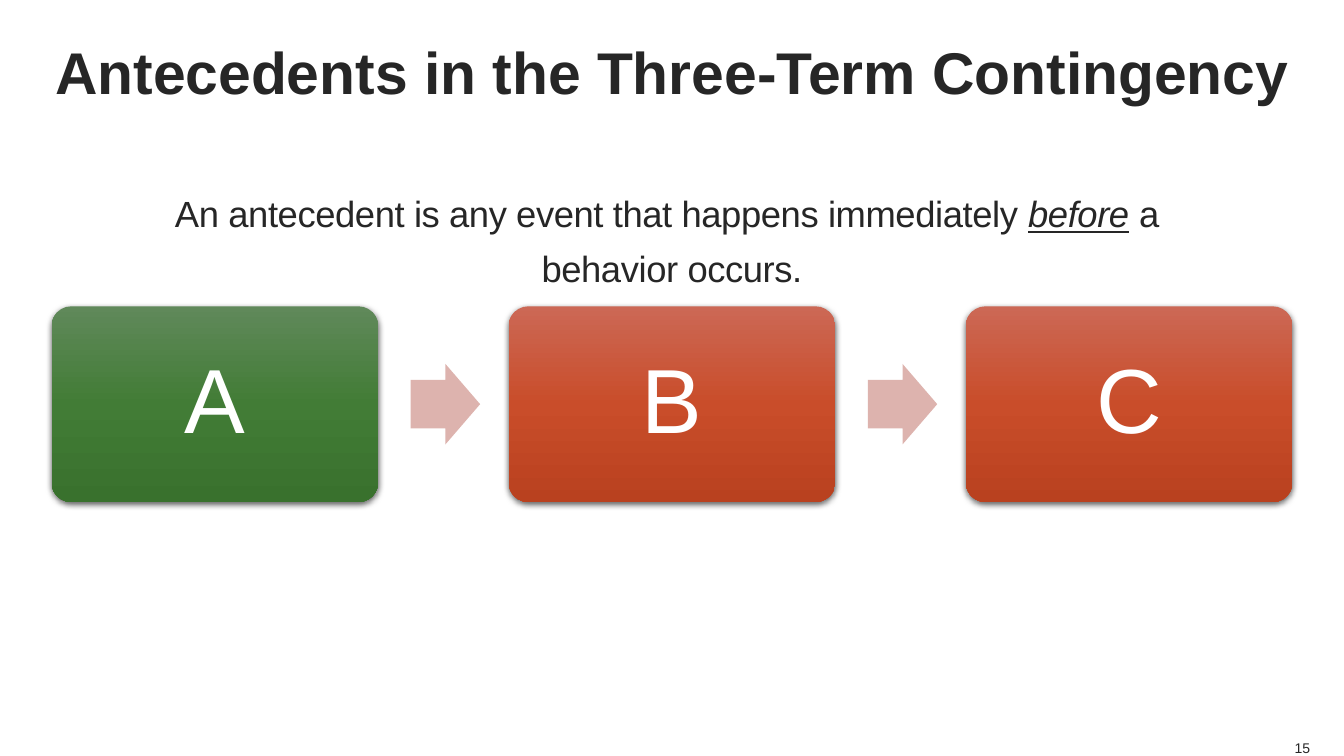
from dataclasses import dataclass

from lxml import etree
from pptx import Presentation
from pptx import util as u
from pptx.dml.color import RGBColor
from pptx.enum import shapes, text
from pptx.oxml import parse_xml
from pptx.oxml.ns import nsdecls, qn


@dataclass(frozen=True)
class Theme:
    font: str = "Arial"
    ink: str = "262626"
    white: str = "FFFFFF"
    arrow: str = "DDB3AE"
    green: tuple = ("60895A", "427C36", "39712D")
    red: tuple = ("CC6855", "C94D2A", "B9411F")
    title: int = 42
    body: int = 26
    letter: int = 65
    number: int = 10


class Deck:
    def __init__(self, theme):
        self.theme = theme
        self.prs = Presentation()
        self.prs.slide_width, self.prs.slide_height = u.Cm(33.87), u.Cm(19.05)

    def add_slide(self):
        self.s = self.prs.slides.add_slide(self.prs.slide_layouts[5])

    def style(self, r, size, color=None, bold=False):
        r.font.name = self.theme.font
        r.font.size = u.Pt(size)
        r.font.bold = bold
        r.font.color.rgb = RGBColor.from_string(color or self.theme.ink)

    def frame(self, sp, anchor, inset=0):
        tf = sp.text_frame
        tf.word_wrap = True
        tf.auto_size = text.MSO_AUTO_SIZE.NONE
        tf.vertical_anchor = anchor
        tf.margin_left = tf.margin_right = u.Cm(inset)
        tf.margin_top = tf.margin_bottom = u.Cm(inset)
        return tf

    def title(self, words, x, y, w, h):
        sp = self.s.shapes.title
        sp.left, sp.top, sp.width, sp.height = map(u.Cm, (x, y, w, h))
        tf = self.frame(sp, text.MSO_ANCHOR.MIDDLE)
        tf.text = words
        p = tf.paragraphs[0]
        p.alignment = text.PP_ALIGN.CENTER
        self.style(p.runs[0], self.theme.title, bold=True)

    def textbox(self, lines, x, y, w, h, size, align, anchor=text.MSO_ANCHOR.TOP,
                spacing=1.0, tracking=0):
        sp = self.s.shapes.add_textbox(*map(u.Cm, (x, y, w, h)))
        p = self.frame(sp, anchor).paragraphs[0]
        p.alignment = align
        p.line_spacing = spacing
        for i, line in enumerate(lines):
            if i:
                p.add_line_break()
            for words, stressed in line:
                r = p.add_run()
                r.text = words
                self.style(r, size)
                r.font.italic = r.font.underline = stressed
                if tracking:
                    r.font._element.set("spc", str(tracking))
        return sp

    def card(self, letter, colors, x, y, w, h):
        sp = self.s.shapes.add_shape(shapes.MSO_SHAPE.ROUNDED_RECTANGLE,
                                     *map(u.Cm, (x, y, w, h)))
        sp.adjustments[0] = 0.1
        sp.line.fill.background()
        self.gradient(sp, colors)
        self.shadow(sp)
        tf = self.frame(sp, text.MSO_ANCHOR.MIDDLE, 0.69)
        tf.text = letter
        p = tf.paragraphs[0]
        p.alignment = text.PP_ALIGN.CENTER
        p.line_spacing = 0.9
        self.style(p.runs[0], self.theme.letter, self.theme.white)

    def gradient(self, sp, colors):
        sp.fill.gradient()
        sp.fill.gradient_angle = 270
        stops = sp._element.spPr.find(qn("a:gradFill")).find(qn("a:gsLst"))
        for gs in list(stops):
            stops.remove(gs)
        for i, color in enumerate(colors):
            gs = etree.SubElement(stops, qn("a:gs"), pos=str(i * 50000))
            etree.SubElement(gs, qn("a:srgbClr"), val=color)

    def shadow(self, sp):
        sp.shadow.inherit = False
        effects = sp._element.spPr.find(qn("a:effectLst"))
        effects.append(parse_xml(
            f'<a:outerShdw {nsdecls("a")} blurRad="{u.Pt(4.5)}" dist="{u.Pt(1.5)}" '
            'dir="5400000" rotWithShape="0"><a:srgbClr val="000000">'
            '<a:alpha val="63000"/></a:srgbClr></a:outerShdw>'))

    def arrow(self, x, y, w, h):
        sp = self.s.shapes.add_shape(shapes.MSO_SHAPE.RIGHT_ARROW,
                                     *map(u.Cm, (x, y, w, h)))
        sp.adjustments[0], sp.adjustments[1] = 0.6, 0.5
        sp.shadow.inherit = False
        sp.fill.solid()
        sp.fill.fore_color.rgb = RGBColor.from_string(self.theme.arrow)
        sp.line.fill.background()


def main():
    theme = Theme()
    deck = Deck(theme)
    deck.add_slide()
    deck.title("Antecedents in the Three-Term Contingency", 1.27, 0, 31.33, 3.56)
    definition = [
        [("An antecedent is any event that happens immediately ", False),
         ("before", True), (" a ", False)],
        [("behavior occurs.", False)],
    ]
    deck.textbox(definition, 1.27, 4.55, 31.33, 3.3, theme.body,
                 text.PP_ALIGN.CENTER, spacing=1.25, tracking=-30)

    left, top, width, height, pitch = 1.3, 7.72, 8.23, 4.93, 11.52
    arrow_w, arrow_h, arrow_offset = 1.75, 2.03, 9.05
    terms = [("A", theme.green), ("B", theme.red), ("C", theme.red)]
    for i, (letter, colors) in enumerate(terms):
        x = left + i * pitch
        deck.card(letter, colors, x, top, width, height)
        if i < len(terms) - 1:
            deck.arrow(x + arrow_offset, top + (height - arrow_h) / 2,
                       arrow_w, arrow_h)

    number = deck.textbox([[("15", False)]], 32.59, 18.62, 0.43, 0.43, theme.number,
                          text.PP_ALIGN.RIGHT, text.MSO_ANCHOR.BOTTOM)
    number.text_frame.word_wrap = False
    deck.prs.save("out.pptx")


if __name__ == "__main__":
    main()
